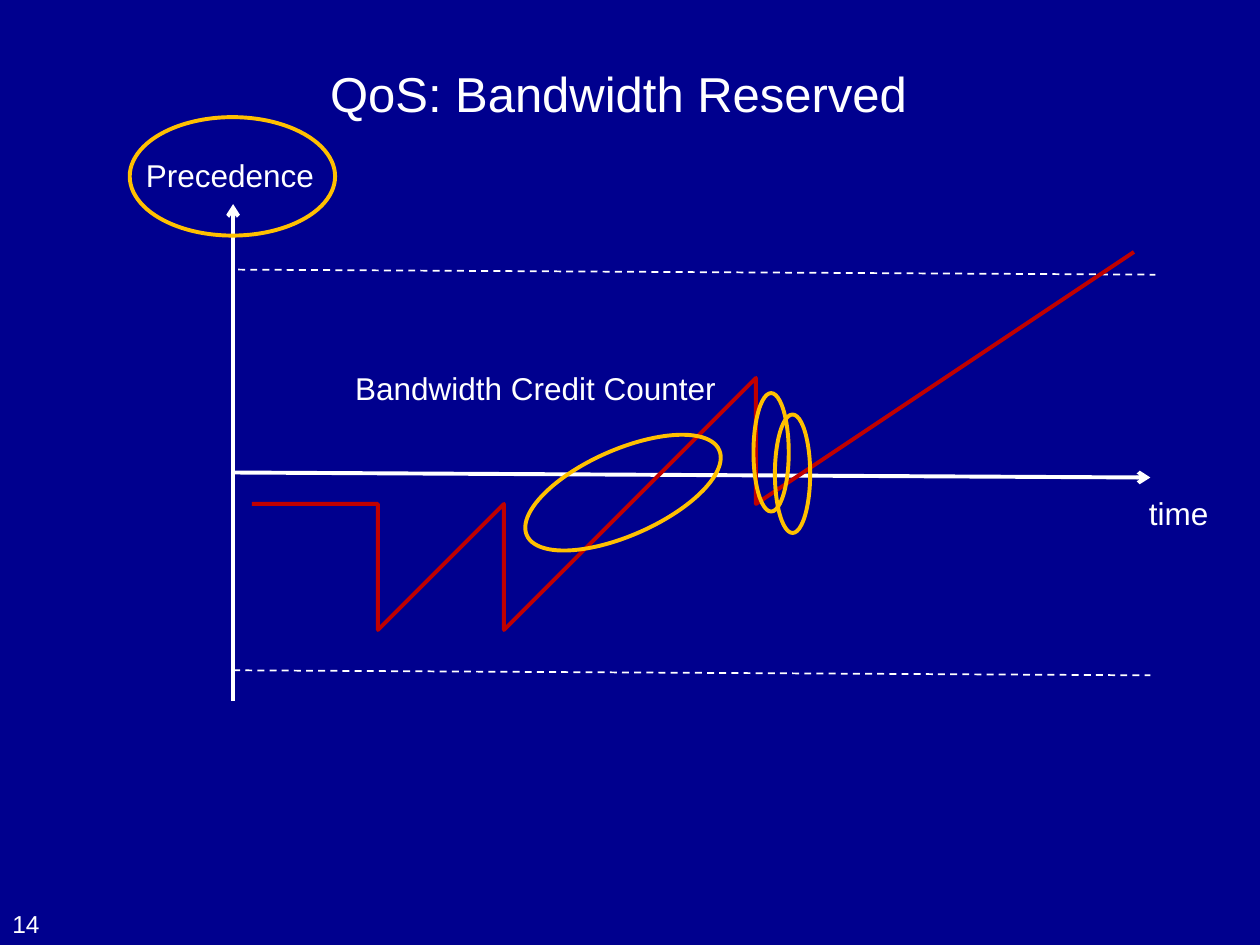
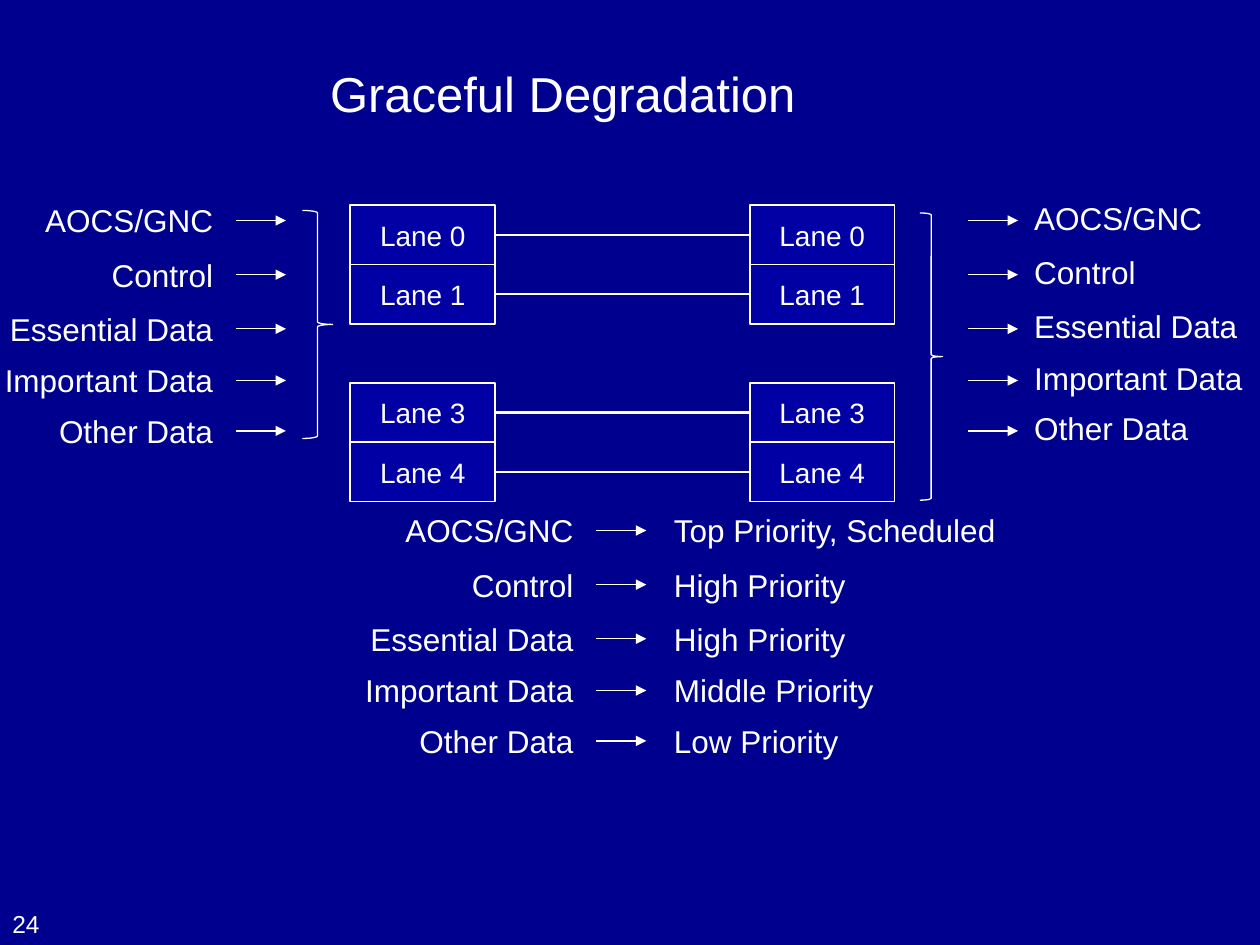
from dataclasses import dataclass

from lxml import etree
from pptx import Presentation
from pptx import util as u
from pptx.dml import color
from pptx.enum import dml, shapes, text
from pptx.oxml import ns


@dataclass(frozen=True)
class Theme:
    font: str = "Arial"
    background: color.RGBColor = color.RGBColor(0x00, 0x00, 0x8E)
    panel: color.RGBColor = color.RGBColor(0x00, 0x00, 0xA4)
    ink: color.RGBColor = color.RGBColor(0xFF, 0xFF, 0xFF)
    credit: color.RGBColor = color.RGBColor(0xC0, 0x00, 0x00)
    marker: color.RGBColor = color.RGBColor(0xFF, 0xC0, 0x00)
    title: int = 28
    label: int = 18
    lane: int = 16
    number: int = 14
    heavy: float = 2.25


theme = Theme()
prs = Presentation()
prs.slide_width, prs.slide_height = u.Inches(10), u.Inches(7.5)
cell = prs.slide_width // 10


def write(parent, txt, at=None, size=theme.label, align=text.PP_ALIGN.LEFT,
          anchor=text.MSO_ANCHOR.TOP, wrap=False):
    sp = parent.add_textbox(*[int(v * cell) for v in at]) if at else parent
    tf = sp.text_frame
    tf.word_wrap = wrap
    tf.auto_size = text.MSO_AUTO_SIZE.NONE
    tf.vertical_anchor = anchor
    p = tf.paragraphs[0]
    p.alignment = align
    r = p.add_run()
    r.text = txt
    r.font.name, r.font.size = theme.font, u.Pt(size)
    r.font.color.rgb = theme.ink
    return sp


def draw_line(parent, start, end, weight, dash=None, tail=None):
    c = parent.add_connector(shapes.MSO_CONNECTOR.STRAIGHT,
                             *[int(v * cell) for v in (*start, *end)])
    c.line.color.rgb = theme.ink
    c.line.width = u.Pt(weight)
    if dash:
        c.line.dash_style = dash
    spPr = c._element.spPr
    if tail:
        etree.SubElement(spPr.find(ns.qn("a:ln")), ns.qn("a:tailEnd"), type=tail)
    etree.SubElement(spPr, ns.qn("a:effectLst"))
    return c


fill = prs.slide_master.background.fill
fill.solid()
fill.fore_color.rgb = theme.background

slides = []
for title, number in (("QoS: Bandwidth Reserved", "14"), ("Graceful Degradation", "24")):
    s = prs.slides.add_slide(prs.slide_layouts[5])
    sp = s.shapes.title
    sp.left, sp.top, sp.width, sp.height = [int(v * cell) for v in (2.52, 0.44, 7.48, 0.59)]
    write(sp, title, size=theme.title, anchor=text.MSO_ANCHOR.MIDDLE, wrap=True)
    write(s.shapes, number, (0, 6.98, 1.06, 0.52), size=theme.number,
          anchor=text.MSO_ANCHOR.BOTTOM, wrap=True)
    slides.append(s)
qos, degradation = slides

axis_x, axis_y, plot_w, slope = 1.85, 3.75, 7.28, 0.04
draw_line(qos.shapes, (axis_x, axis_y), (axis_x + plot_w, axis_y + slope),
          theme.heavy, tail="arrow")
for x, y in ((1.89, 2.14), (axis_x, 5.32)):
    draw_line(qos.shapes, (x, y), (x + plot_w, y + slope), 1, dash=dml.MSO_LINE.DASH)

credit_points = [(1.89, 3.79), (2.26, 3.54), (2.28, 3.99), (2.56, 3.83), (2.56, 4.27),
                 (2.8, 4.14), (2.8, 4.64), (3.72, 4.15), (3.72, 4.56), (6.14, 3.39),
                 (6.16, 3.79), (6.29, 3.64), (6.3, 4.1), (9.14, 2.28)]
builder = qos.shapes.build_freeform(*credit_points[0], scale=cell)
builder.add_line_segments(credit_points[1:], close=False)
sp = builder.convert_to_shape()
sp.shadow.inherit = False
sp.fill.background()
sp.line.color.rgb = theme.credit
sp.line.width = u.Pt(theme.heavy)

draw_line(qos.shapes, (axis_x, 5.56), (axis_x, 1.62), theme.heavy, tail="arrow")
for txt, x, y, w, wrap in (("time", 9.02, 3.87, 0.68, False),
                           ("Precedence", 1.06, 1.19, 1.65, True),
                           ("Bandwidth Credit Counter", 2.72, 2.88, 3.09, False)):
    write(qos.shapes, txt, (x, y, w, 0.4), wrap=wrap)

for *at, angle in ((4.11, 3.57, 1.67, 0.68, 336.1), (5.98, 3.12, 0.28, 0.94, 0),
                   (1.03, 0.93, 1.63, 0.94, 0), (6.15, 3.29, 0.28, 0.94, 0)):
    sp = qos.shapes.add_shape(shapes.MSO_SHAPE.OVAL, *[int(v * cell) for v in at])
    sp.rotation = angle
    sp.shadow.inherit = False
    sp.fill.background()
    sp.line.color.rgb = theme.marker
    sp.line.width = u.Pt(theme.heavy)

lane_w, lane_h, lane_top = 1.15, 0.47, 1.63
for lane in (0, 1, 3, 4):
    ends = []
    for x in (2.78, 5.95):
        at = x, lane_top + lane * lane_h, lane_w, lane_h
        sp = degradation.shapes.add_shape(shapes.MSO_SHAPE.RECTANGLE,
                                          *[int(v * cell) for v in at])
        sp.shadow.inherit = False
        sp.fill.solid()
        sp.fill.fore_color.rgb = theme.panel
        sp.line.color.rgb = theme.ink
        sp.line.width = u.Pt(1)
        write(sp, f"Lane {lane}", size=theme.lane, align=text.PP_ALIGN.CENTER,
              anchor=text.MSO_ANCHOR.MIDDLE, wrap=True)
        ends.append(sp)
    link = draw_line(degradation.shapes, (0, 0), (1, 1), 1.5)
    link.begin_connect(ends[0], 3)
    link.end_connect(ends[1], 1)

for at in ((2.4, 1.67, 0.24, 1.81), (7.3, 1.69, 0.18, 2.28)):
    sp = degradation.shapes.add_shape(shapes.MSO_SHAPE.RIGHT_BRACE,
                                      *[int(v * cell) for v in at])
    sp.shadow.inherit = False
    sp.fill.background()
    sp.line.color.rgb = theme.ink
    sp.line.width = u.Pt(0.75)

flows = [("AOCS/GNC", 1.55, 1.75, "Top Priority, Scheduled", 2.78),
         ("Control", 1.02, 2.18, "High Priority", 1.58),
         ("Essential Data", 1.83, 2.61, "High Priority", 1.58),
         ("Important Data", 1.87, 3.02, "Middle Priority", 1.8),
         ("Other Data", 1.44, 3.42, "Low Priority", 1.52)]
arrow_w, label_h, priority_drop = 0.4, 0.4, 2.46
priorities = degradation.shapes.add_group_shape().shapes
for name, name_w, y, priority, priority_w in flows:
    low_y = y + priority_drop
    for parent, x, mid in ((degradation.shapes, 1.87, y), (degradation.shapes, 7.68, y),
                           (priorities, 4.73, low_y)):
        draw_line(parent, (x, mid), (x + arrow_w, mid), 0.75, tail="triangle")
    for parent, right, mid in ((degradation.shapes, 1.79, y), (priorities, 4.65, low_y)):
        write(parent, name, (right - name_w, mid - 0.2, name_w, label_h),
              align=text.PP_ALIGN.RIGHT)
    write(degradation.shapes, name, (8.11, y - 0.22, name_w, label_h))
    write(priorities, priority, (5.25, low_y - 0.2, priority_w, label_h))

prs.save("out.pptx")
